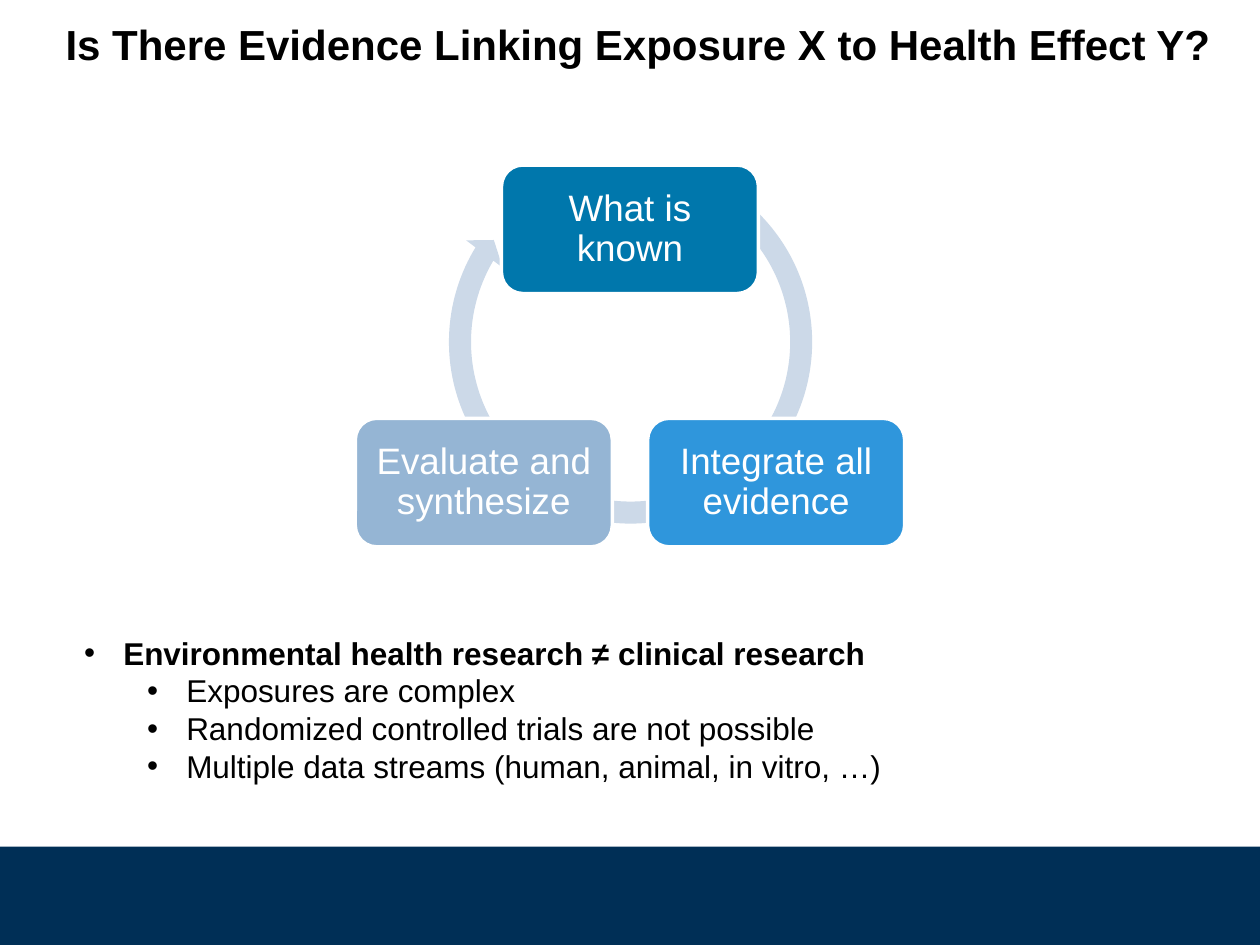
from lxml.etree import SubElement
from pptx import Presentation
from pptx.dml.color import RGBColor
from pptx.enum.shapes import MSO_SHAPE
from pptx.enum.text import MSO_ANCHOR, MSO_AUTO_SIZE, PP_ALIGN
from pptx.oxml.ns import qn
from pptx.util import Inches, Pt

COLORS = {
    "navy": "002F56",
    "arrow": "CCD9E8",
    "teal": "0077AC",
    "blue": "2F96DC",
    "pale": "95B5D4",
    "white": "FFFFFF",
    "black": "000000",
}
FONT = "Arial"


def set_attributes(target, values):
    for name, value in values.items():
        setattr(target, name, value)


class SlideBuilder:
    def __init__(self, presentation):
        self.slide = presentation.slides.add_slide(presentation.slide_layouts[5])

    def place(self, shape, box):
        names = ("left", "top", "width", "height")
        set_attributes(shape, dict(zip(names, map(Inches, box))))

    def style_font(self, font, size, color, bold=False):
        set_attributes(font, {"name": FONT, "size": Pt(size), "bold": bold})
        font.color.rgb = RGBColor.from_string(COLORS[color])

    def title(self, text, box):
        shape = self.slide.shapes.title
        self.place(shape, box)
        frame = shape.text_frame
        frame.text = text
        set_attributes(frame, {
            "word_wrap": True,
            "auto_size": MSO_AUTO_SIZE.NONE,
            "vertical_anchor": MSO_ANCHOR.TOP,
        })
        paragraph = frame.paragraphs[0]
        paragraph.alignment = PP_ALIGN.LEFT
        self.style_font(paragraph.font, 24, "black", bold=True)

    def shape(self, kind, box, fill, outline=None, adjustments=()):
        shape = self.slide.shapes.add_shape(kind, *map(Inches, box))
        shape.shadow.inherit = False
        shape.fill.solid()
        shape.fill.fore_color.rgb = RGBColor.from_string(COLORS[fill])
        if outline:
            shape.line.color.rgb = RGBColor.from_string(COLORS[outline])
            shape.line.width = Pt(2)
        else:
            shape.line.fill.background()
        for index, value in enumerate(adjustments):
            shape.adjustments[index] = value
        return shape

    def node(self, text, box, fill):
        shape = self.shape(MSO_SHAPE.ROUNDED_RECTANGLE, box, fill, "white")
        frame = shape.text_frame
        frame.text = text
        margins = ("margin_left", "margin_top", "margin_right", "margin_bottom")
        set_attributes(frame, dict.fromkeys(margins, Inches(0.09)))
        set_attributes(frame, {"word_wrap": True, "vertical_anchor": MSO_ANCHOR.MIDDLE})
        paragraph = frame.paragraphs[0]
        set_attributes(paragraph, {"alignment": PP_ALIGN.CENTER, "line_spacing": 0.9})
        self.style_font(paragraph.font, 21, "white")

    def bullets(self, items, box):
        frame = self.slide.shapes.add_textbox(*map(Inches, box)).text_frame
        frame.word_wrap = True
        for index, (level, text) in enumerate(items):
            paragraph = frame.paragraphs[0] if index == 0 else frame.add_paragraph()
            paragraph.text = text
            paragraph.level = level
            properties = paragraph._p.get_or_add_pPr()
            properties.set("marL", str(Inches(0.31 + 0.5 * level)))
            properties.set("indent", str(Inches(-0.31)))
            SubElement(properties, qn("a:buFont"), typeface=FONT)
            SubElement(properties, qn("a:buChar"), char="•")
            self.style_font(paragraph.font, 18, "black", bold=level == 0)


def main():
    presentation = Presentation()
    set_attributes(presentation, {"slide_width": Inches(10), "slide_height": Inches(7.5)})
    builder = SlideBuilder(presentation)

    # Footer band and title
    builder.shape(MSO_SHAPE.RECTANGLE, (0, 6.72, 10, 0.8), "navy")
    builder.title("Is There Evidence Linking Exposure X to Health Effect Y?",
                  (0.42, 0.1, 9.42, 0.5))

    # Evidence cycle: one ring arrow behind three nodes
    builder.shape(MSO_SHAPE.CIRCULAR_ARROW, (3.47, 1.18, 3.07, 3.07), "arrow",
                  adjustments=(0.057, 3.405, 126.634, 180.999, 0.059))
    center, offset, width, height = 5, 1.16, 2.04, 1.02
    nodes = [
        ("What is known", 0, 1.31, "teal"),
        ("Integrate all evidence", offset, 3.32, "blue"),
        ("Evaluate and synthesize", -offset, 3.32, "pale"),
    ]
    for text, shift, top, fill in nodes:
        builder.node(text, (center + shift - width / 2, top, width, height), fill)

    # Research context
    builder.bullets([
        (0, "Environmental health research ≠ clinical research"),
        (1, "Exposures are complex"),
        (1, "Randomized controlled trials are not possible"),
        (1, "Multiple data streams (human, animal, in vitro, …)"),
    ], (0.57, 4.98, 9.15, 1.62))

    presentation.save("out.pptx")


if __name__ == "__main__":
    main()
